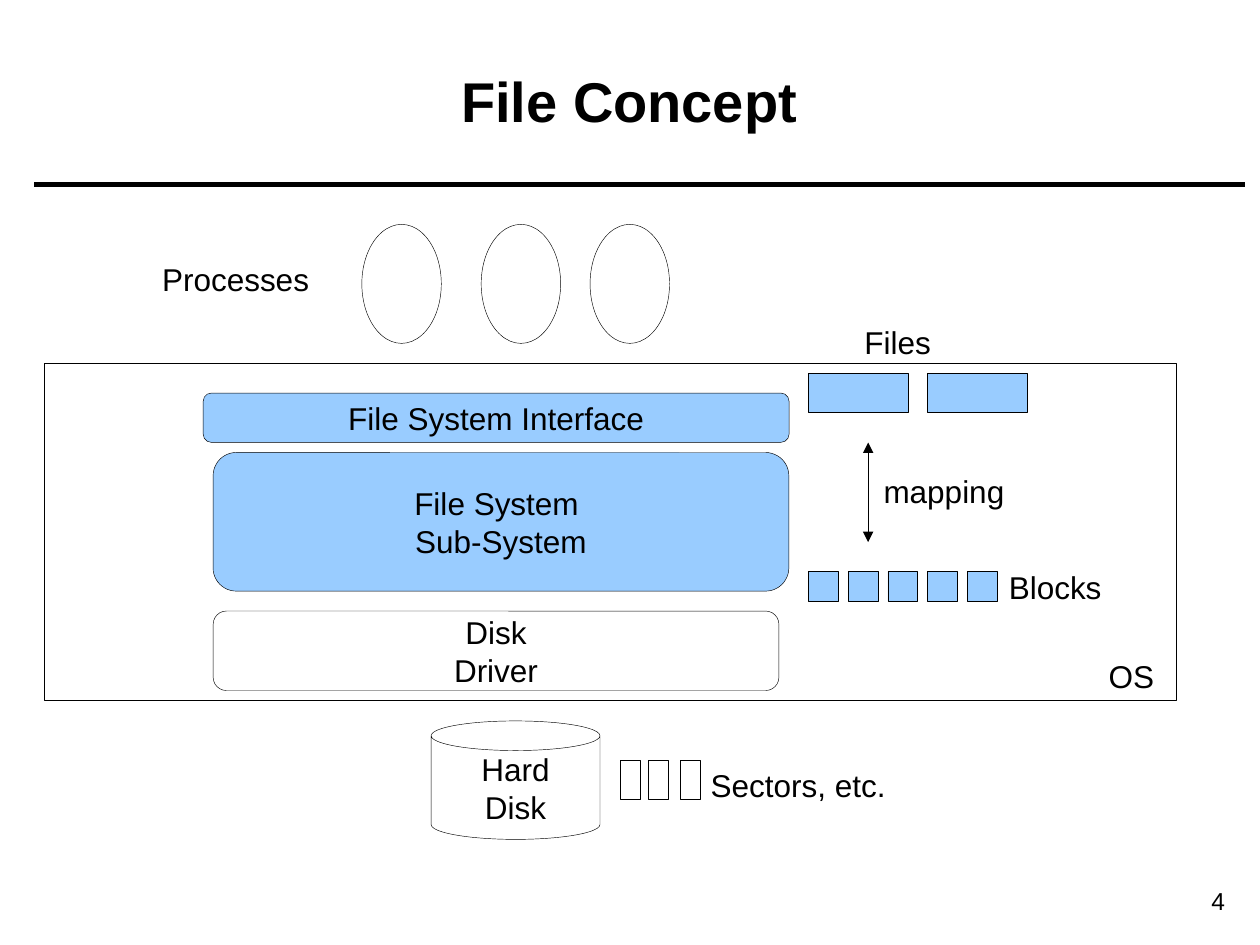
from lxml import etree
from pptx import Presentation
from pptx.dml.color import RGBColor
from pptx.enum import shapes, text
from pptx.oxml.ns import qn
from pptx.util import Pt

COLORS = {"ink": "000000", "blue": "99CCFF"}
FONT = "Arial"
HAIRLINE = 0.25
KIND = shapes.MSO_SHAPE
ALIGN = text.PP_ALIGN
ANCHOR = text.MSO_ANCHOR

# Content: lengths in points, boxes as (left, top, width, height)
TITLE = ("File Concept", (25.2, 12.4, 668.9, 90))
PAGE_NUMBER = ("4", (632.2, 502.6, 74.9, 24.5))

# Layers: shape, box, fill, corner or rim ratio, paragraphs
LAYERS = [
    (KIND.CAN, (246.4, 412, 96.5, 67.7), None, 0.25, ["Hard\vDisk"]),
    (KIND.ROUNDED_RECTANGLE, (121.8, 349.2, 323.3, 45.4), None, 0.167,
     ["Disk", "Driver"]),
    (KIND.ROUNDED_RECTANGLE, (121.8, 258.6, 329, 79.2), "blue", 0.167,
     ["File System ", "Sub-System"]),
    (KIND.ROUNDED_RECTANGLE, (116.1, 224.6, 334.8, 28.2), "blue", 0.167,
     ["File System Interface"]),
]

# Rows of equal items: shape, lefts, top, width, height, fill
ROWS = {
    "blocks": (KIND.RECTANGLE, [462 + 22.68 * i for i in range(5)],
               326.6, 17, 17, "blue"),
    "files": (KIND.RECTANGLE, [462, 530], 213.2, 56.9, 22.3, "blue"),
    "sectors": (KIND.RECTANGLE, [354.2, 370.6, 388.6], 434.2, 11.5, 22.3, None),
    "processes": (KIND.OVAL, [206.8, 275, 337.2], 128.2, 45.4, 68, None),
}
OS_FRAME = (25.2, 207.4, 647, 193)

LABELS = [
    ("Blocks", (568.5, 321.1, 69, 28.8)),
    ("Files", (485.7, 181, 54.6, 28.8)),
    ("Sectors, etc.", (397.9, 434.2, 116.5, 28.8)),
    ("Processes", (84.7, 145, 99.9, 28.8)),
    ("OS", (625.4, 372.2, 42.3, 28.8)),
    ("mapping", (496.7, 266, 85.5, 28.8)),
]

# Lines: start x, start y, end x, end y
TITLE_RULE = (19.7, 105.6, 711.4, 105.6)
MAPPING_ARROW = (496.1, 252.9, 496.1, 309.8)

prs = Presentation()
prs.slide_width, prs.slide_height = Pt(720), Pt(540)
slide = prs.slides.add_slide(prs.slide_layouts[6])


def color(name):
    return RGBColor.from_string(COLORS[name])


def write(shape, paragraphs, size=18, bold=False, align=ALIGN.CENTER,
          anchor=ANCHOR.MIDDLE, wrap=False, grow=False):
    frame = shape.text_frame
    frame.word_wrap = wrap
    frame.vertical_anchor = anchor
    if grow:
        frame.auto_size = text.MSO_AUTO_SIZE.SHAPE_TO_FIT_TEXT
    for i, content in enumerate(paragraphs):
        para = frame.add_paragraph() if i else frame.paragraphs[0]
        para.alignment = align
        for j, part in enumerate(content.split("\v")):
            if j:
                para.add_line_break()
            run = para.add_run()
            run.text = part
            run.font.name, run.font.size, run.font.bold = FONT, Pt(size), bold
            run.font.color.rgb = color("ink")


def add_text(content, box, **style):
    write(slide.shapes.add_textbox(*map(Pt, box)), [content], **style)


def add_outlined(kind, box, fill=None):
    shape = slide.shapes.add_shape(kind, *map(Pt, box))
    shape.shadow.inherit = False
    if fill:
        shape.fill.solid()
        shape.fill.fore_color.rgb = color(fill)
    else:
        shape.fill.background()
    shape.line.color.rgb = color("ink")
    shape.line.width = Pt(HAIRLINE)
    return shape


def add_line(ends, width, arrows=False):
    line = slide.shapes.add_connector(shapes.MSO_CONNECTOR.STRAIGHT,
                                      *map(Pt, ends))
    line.line.color.rgb = color("ink")
    line.line.width = Pt(width)
    properties = line.element.spPr
    if arrows:
        for tag in ("a:headEnd", "a:tailEnd"):
            etree.SubElement(properties.find(qn("a:ln")), qn(tag),
                             type="triangle")
    etree.SubElement(properties, qn("a:effectLst"))


# Heading and page number
add_line(TITLE_RULE, 3)
add_text(*PAGE_NUMBER, size=14, align=ALIGN.RIGHT, anchor=ANCHOR.TOP, wrap=True)
add_text(*TITLE, size=32, bold=True, wrap=True)

# System layers
for kind, box, fill, ratio, paragraphs in LAYERS:
    layer = add_outlined(kind, box, fill)
    layer.adjustments[0] = ratio
    write(layer, paragraphs)

# Rows of blocks, files, sectors and processes, then the OS boundary
for kind, lefts, top, width, height, fill in ROWS.values():
    for left in lefts:
        add_outlined(kind, (left, top, width, height), fill)
add_outlined(KIND.RECTANGLE, OS_FRAME)

# Labels and mapping arrow
add_line(MAPPING_ARROW, HAIRLINE, arrows=True)
for label, box in LABELS:
    add_text(label, box, anchor=ANCHOR.TOP, grow=True)

prs.save("out.pptx")
